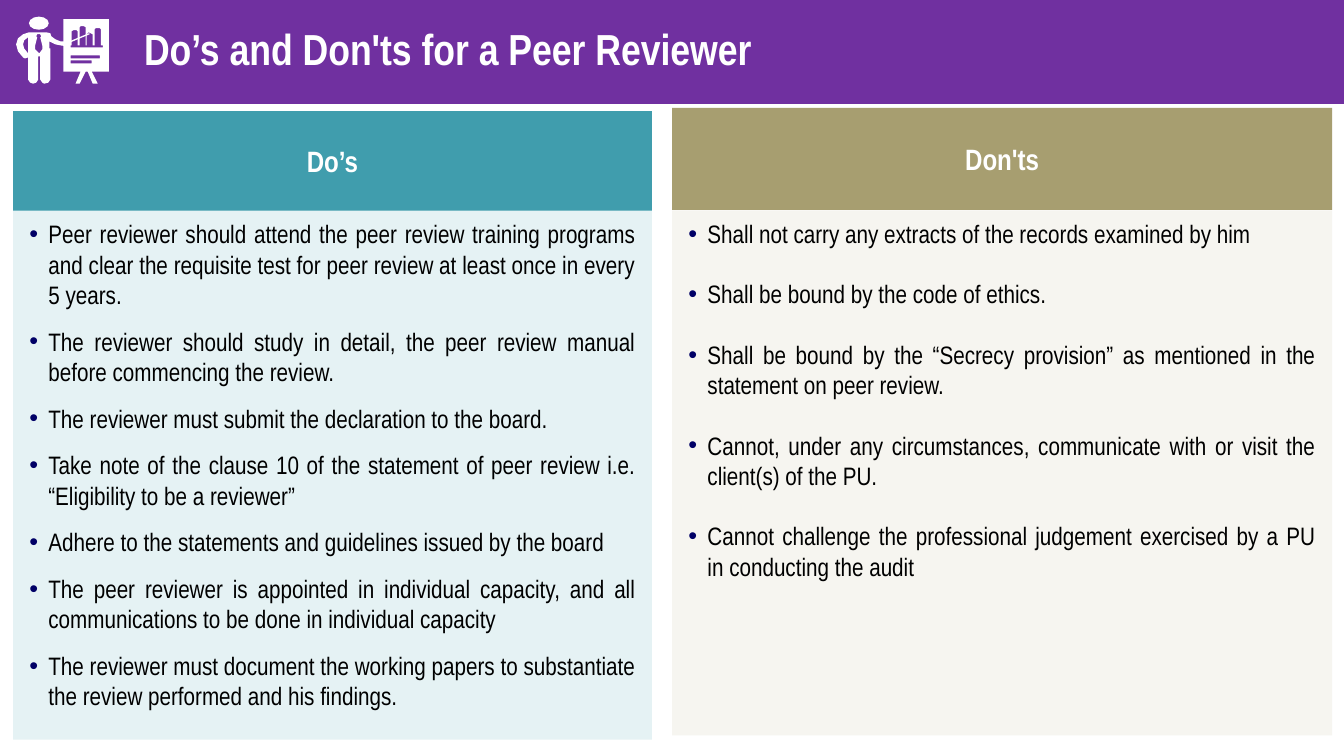
import pptx
import pptx.util
import pptx.dml.color
import pptx.enum.shapes
import pptx.enum.text
import pptx.oxml
import pptx.oxml.ns

Cm = pptx.util.Cm
Pt = pptx.util.Pt
RGBColor = pptx.dml.color.RGBColor
MSO_SHAPE = pptx.enum.shapes.MSO_SHAPE
MSO_ANCHOR = pptx.enum.text.MSO_ANCHOR
PP_ALIGN = pptx.enum.text.PP_ALIGN

WHITE = RGBColor(0xFF, 0xFF, 0xFF)
BLACK = RGBColor(0, 0, 0)
PURPLE = RGBColor(0x70, 0x30, 0xA0)
TEAL = RGBColor(0x40, 0x9D, 0xAD)
PALE_TEAL = RGBColor(0xE5, 0xF2, 0xF4)
OLIVE = RGBColor(0xA7, 0x9E, 0x70)
PALE_OLIVE = RGBColor(0xF6, 0xF5, 0xF0)
BULLET_NAVY = "000066"
FONT = "Arial Narrow"
ICON_UNIT = Cm(0.0254)

DOS = [
    "Peer reviewer should attend the peer review training programs and clear "
    "the requisite test for peer review at least once in every 5 years.",
    "The reviewer should study in detail, the peer review manual before "
    "commencing the review.",
    "The reviewer must submit the declaration to the board.",
    "Take note of the clause 10 of the statement of peer review i.e. "
    "“Eligibility to be a reviewer”",
    "Adhere to the statements and guidelines issued by the board",
    "The peer reviewer is appointed in individual capacity, and all "
    "communications to be done in individual capacity",
    "The reviewer must document the working papers to substantiate the "
    "review performed and his findings.",
]
DONTS = [
    "Shall not carry any extracts of the records examined by him",
    "Shall be bound by the code of ethics.",
    "Shall be bound by the “Secrecy provision” as mentioned in the "
    "statement on peer review.",
    "Cannot, under any circumstances, communicate with or visit the "
    "client(s) of the PU.",
    "Cannot challenge the professional judgement exercised by a PU in "
    "conducting the audit",
]

# Icon outlines in hundredths of an inch; later contours cut holes in the first
BOARD = [
    [(63, 19), (108, 19), (108, 71), (91, 71), (97, 83), (92, 83), (87, 71),
     (85, 71), (79, 83), (75, 83), (80, 71), (63, 71)],
    [(70, 45), (71, 45), (71, 31), (73, 30), (76, 30), (77, 31), (77, 45),
     (79, 45), (79, 27), (80, 26), (83, 26), (85, 27), (85, 45), (86, 45),
     (86, 34), (88, 32), (92, 34), (92, 45), (94, 45), (94, 29), (95, 28),
     (99, 28), (100, 29), (100, 45), (102, 45), (102, 47), (70, 47)],
    [(70, 55), (99, 55), (99, 58), (70, 58)],
    [(70, 60), (91, 60), (91, 63), (70, 63)],
]
PRESENTER = [
    [(50, 79), (50, 48), (49, 48), (49, 41), (55, 44), (60, 45), (66, 46),
     (69, 44), (69, 42), (67, 41), (60, 41), (55, 39), (51, 36), (50, 33),
     (46, 32), (29, 32), (23, 34), (18, 38), (16, 44), (18, 51), (23, 57),
     (25, 58), (28, 57), (28, 79), (30, 82), (33, 83), (36, 82), (38, 79),
     (38, 56), (40, 56), (40, 79), (42, 82), (44, 83), (48, 82)],
    [(23, 44), (24, 40), (28, 37), (28, 53), (24, 48)],
    [(39, 53), (35, 49), (35, 45), (37, 37), (36, 36), (37, 34), (40, 34),
     (41, 36), (40, 37), (42, 45), (42, 49)],
]
POINTER = [[(69, 41), (88, 33), (89, 33), (89, 34), (70, 42)]]


def style_shape(sp, fill):
    sp.shadow.inherit = False
    sp.fill.solid()
    sp.fill.fore_color.rgb = fill
    sp.line.fill.background()


def add_panel(slide, box, fill, insets, anchor):
    """Add a filled rectangle; box and insets are in centimetres."""
    sp = slide.shapes.add_shape(MSO_SHAPE.RECTANGLE, *map(Cm, box))
    style_shape(sp, fill)
    tf = sp.text_frame
    tf.word_wrap = True
    tf.vertical_anchor = anchor
    tf.margin_left, tf.margin_top, tf.margin_right, tf.margin_bottom = map(Cm, insets)
    return sp


def set_font(p, size, color, bold=False):
    p.font.name = FONT
    p.font.size = Pt(size)
    p.font.bold = bold
    p.font.color.rgb = color


def add_heading(slide, box, fill, text, size, align, left_inset=0.3):
    sp = add_panel(slide, box, fill, (left_inset, 0.2, 0.3, 0.2), MSO_ANCHOR.MIDDLE)
    p = sp.text_frame.paragraphs[0]
    p.text = text
    p.alignment = align
    set_font(p, size, WHITE, bold=True)
    return sp


def set_bullet(p):
    pPr = p._p.get_or_add_pPr()
    pPr.set("marL", str(Cm(0.48)))
    pPr.set("indent", str(Cm(-0.48)))
    ns = pptx.oxml.ns.nsdecls("a")
    children = (
        f'<a:buClr {ns}><a:srgbClr val="{BULLET_NAVY}"/></a:buClr>',
        f'<a:buFont {ns} typeface="Arial"/>',
        f'<a:buChar {ns} char="•"/>',
    )
    for xml in children:
        pPr.insert_element_before(pptx.oxml.parse_xml(xml), "a:tabLst", "a:defRPr", "a:extLst")


def add_bullet_panel(slide, box, fill, items, top_inset, gap):
    sp = add_panel(slide, box, fill, (0.41, top_inset, 0.41, 0.41), MSO_ANCHOR.TOP)
    tf = sp.text_frame
    for i, item in enumerate(items):
        p = tf.add_paragraph() if i else tf.paragraphs[0]
        p.text = item
        p.alignment = PP_ALIGN.JUSTIFY
        p.space_before = Pt(gap if i else 0)
        set_font(p, 18, BLACK)
        set_bullet(p)


def add_outline(slide, contours):
    first, *holes = contours
    builder = slide.shapes.build_freeform(*first[0], scale=ICON_UNIT)
    builder.add_line_segments(first[1:])
    for hole in holes:
        builder.move_to(*hole[0])
        builder.add_line_segments(hole[1:])
    style_shape(builder.convert_to_shape(), WHITE)


def add_presenter_icon(slide):
    for contours in (BOARD, PRESENTER, POINTER):
        add_outline(slide, contours)
    head = slide.shapes.add_shape(MSO_SHAPE.OVAL, Cm(0.73), Cm(0.42), Cm(0.5), Cm(0.33))
    style_shape(head, WHITE)


def main():
    prs = pptx.Presentation()
    prs.slide_width, prs.slide_height = Cm(33.87), Cm(19.05)
    slide = prs.slides.add_slide(prs.slide_layouts[6])

    banner = add_heading(slide, (-0.1, -0.2, 33.97, 2.82), PURPLE,
                         "Do’s and Don'ts for a Peer Reviewer", 31,
                         PP_ALIGN.LEFT, left_inset=3.73)
    banner.line.color.rgb = WHITE
    banner.line.width = Pt(0.5)
    add_presenter_icon(slide)

    add_bullet_panel(slide, (0.33, 4.47, 16.1, 14.17), PALE_TEAL, DOS, 1.04, 11.8)
    add_heading(slide, (0.33, 2.8, 16.1, 2.51), TEAL, "Do’s", 21, PP_ALIGN.CENTER)
    add_heading(slide, (16.94, 2.72, 16.63, 2.57), OLIVE, "Don'ts", 21, PP_ALIGN.CENTER)
    add_bullet_panel(slide, (16.94, 5.3, 16.63, 13.23), PALE_OLIVE, DONTS, 0.2, 21.6)

    prs.save("out.pptx")


if __name__ == "__main__":
    main()
